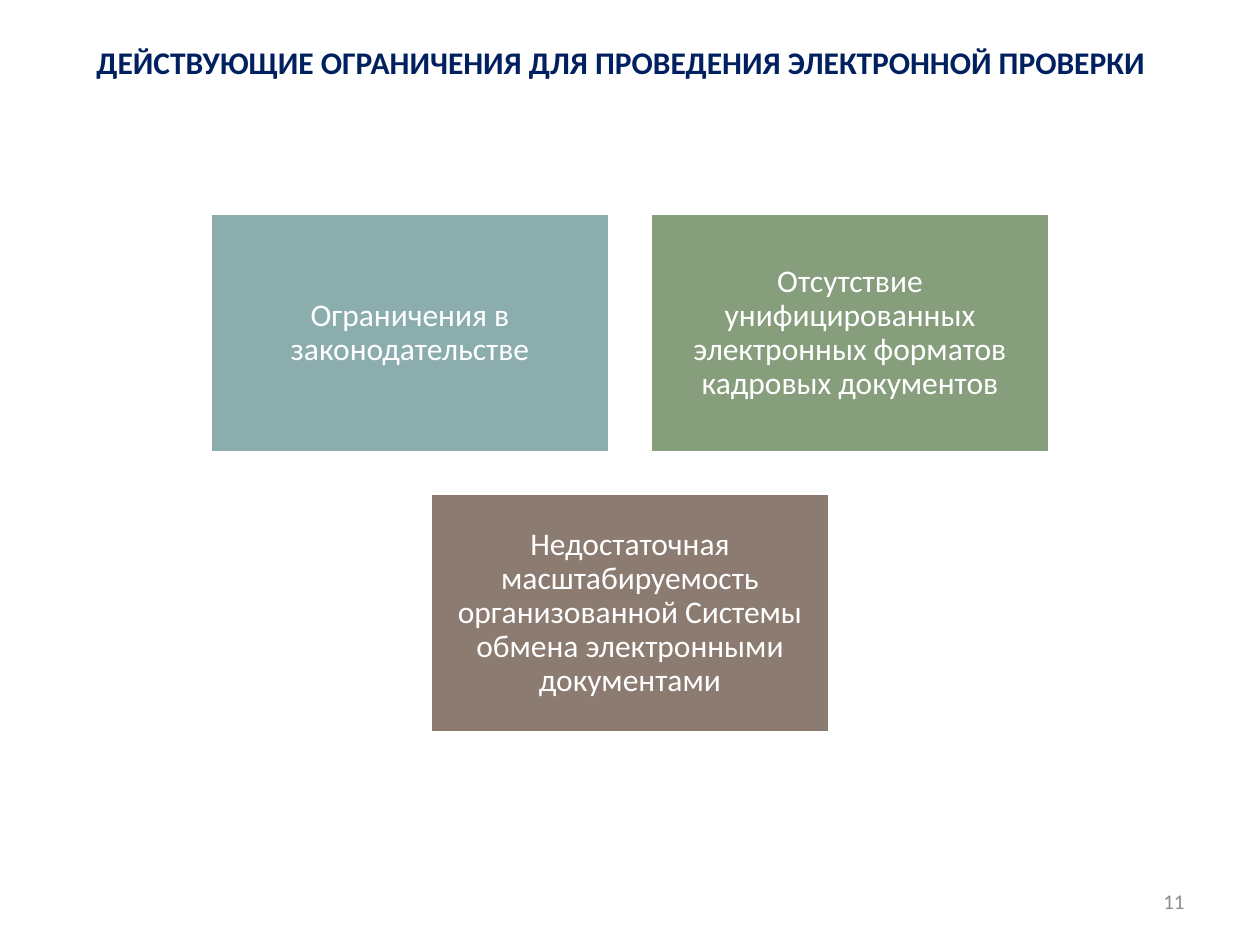
from pptx import Presentation
from pptx.dml.color import RGBColor
from pptx.enum.shapes import MSO_SHAPE
from pptx.enum.text import MSO_ANCHOR, PP_ALIGN
from pptx.util import Pt

NAVY = RGBColor(0x00, 0x20, 0x60)
TEAL = RGBColor(0x8C, 0xAD, 0xAE)
GREEN = RGBColor(0x87, 0x9E, 0x7D)
BROWN = RGBColor(0x8C, 0x7B, 0x70)
GRAY = RGBColor(0x8C, 0x8C, 0x8C)
WHITE = RGBColor(0xFF, 0xFF, 0xFF)

EMU_PER_PX = 914400 / 126
SLIDE_WIDTH, SLIDE_HEIGHT = 1260, 945
BOX_WIDTH, BOX_HEIGHT, GAP = 400, 240, 40
FIRST_ROW_TOP = 213


def px(length):
    return round(length * EMU_PER_PX)


def write_text(shape, text, size, color, alignment, anchor, bold=False):
    frame = shape.text_frame
    frame.word_wrap = True
    frame.vertical_anchor = anchor
    frame.text = text
    paragraph = frame.paragraphs[0]
    paragraph.alignment = alignment
    paragraph.font.name = "Calibri"
    paragraph.font.size = Pt(size)
    paragraph.font.bold = bold
    paragraph.font.color.rgb = color


presentation = Presentation()
presentation.slide_width = px(SLIDE_WIDTH)
presentation.slide_height = px(SLIDE_HEIGHT)
slide = presentation.slides.add_slide(presentation.slide_layouts[5])

title = slide.shapes.title
title.left, title.top, title.width, title.height = px(54), px(37), px(1134), px(79)
write_text(title, "ДЕЙСТВУЮЩИЕ ОГРАНИЧЕНИЯ ДЛЯ ПРОВЕДЕНИЯ ЭЛЕКТРОННОЙ ПРОВЕРКИ",
           18, NAVY, PP_ALIGN.CENTER, MSO_ANCHOR.TOP, bold=True)

restriction_rows = [
    [("Ограничения в законодательстве", TEAL),
     ("Отсутствие унифицированных электронных форматов кадровых документов", GREEN)],
    [("Недостаточная масштабируемость организованной Системы обмена "
      "электронными документами", BROWN)],
]
for row_index, row in enumerate(restriction_rows):
    row_width = len(row) * BOX_WIDTH + (len(row) - 1) * GAP
    row_left = (SLIDE_WIDTH - row_width) // 2
    top = FIRST_ROW_TOP + row_index * (BOX_HEIGHT + GAP)
    for column_index, (text, color) in enumerate(row):
        left = row_left + column_index * (BOX_WIDTH + GAP)
        box = slide.shapes.add_shape(MSO_SHAPE.RECTANGLE, px(left), px(top),
                                     px(BOX_WIDTH), px(BOX_HEIGHT))
        box.shadow.inherit = False
        box.fill.solid()
        box.fill.fore_color.rgb = color
        box.line.color.rgb = WHITE
        box.line.width = Pt(2)
        write_text(box, text, 18, WHITE, PP_ALIGN.CENTER, MSO_ANCHOR.MIDDLE)
        frame = box.text_frame
        frame.margin_left = frame.margin_right = px(9)
        frame.margin_top = frame.margin_bottom = px(9)
        frame.paragraphs[0].line_spacing = 0.9

page_number = slide.shapes.add_textbox(px(903), px(876), px(294), px(50))
write_text(page_number, "11", 12, GRAY, PP_ALIGN.RIGHT, MSO_ANCHOR.MIDDLE)

presentation.save("out.pptx")
